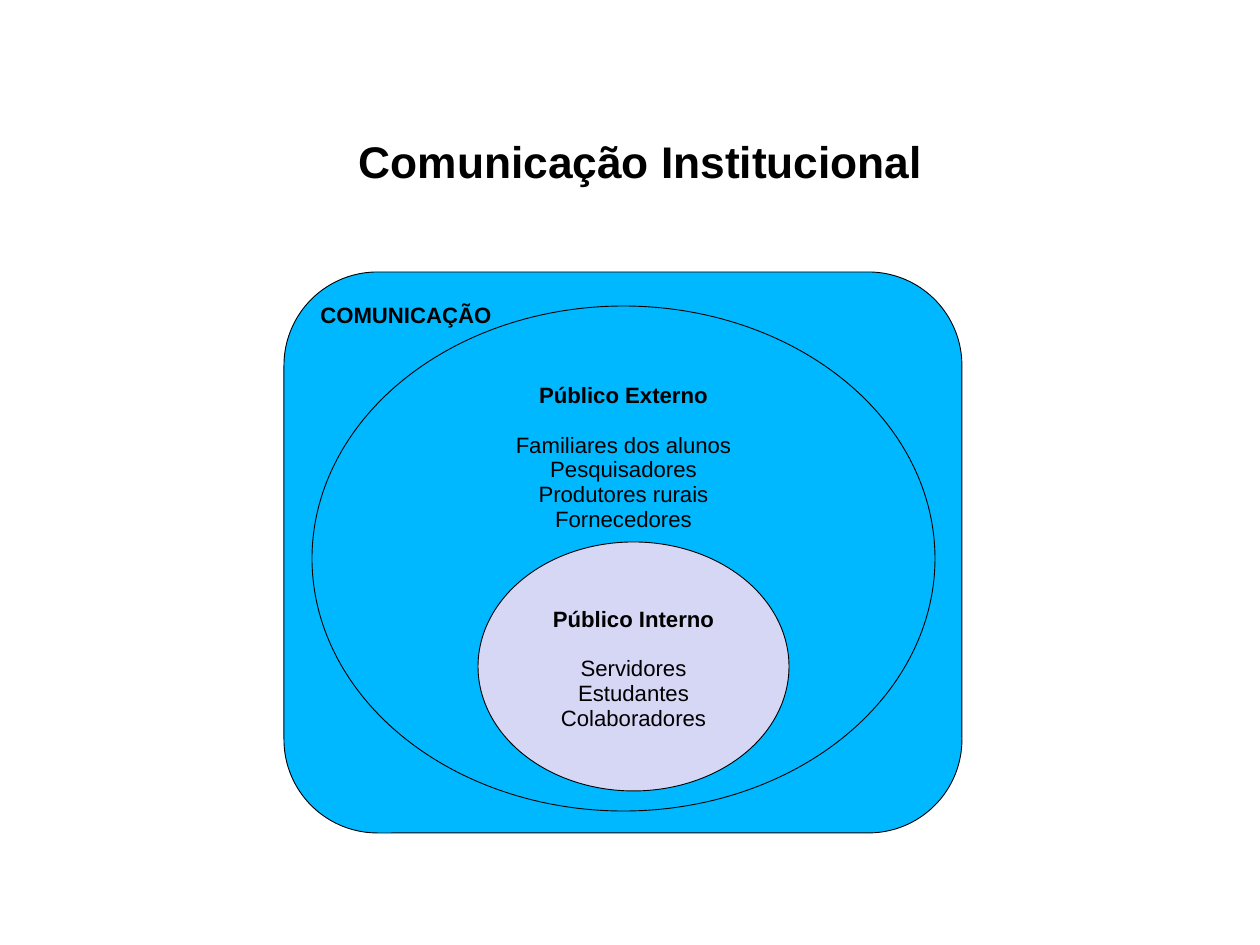
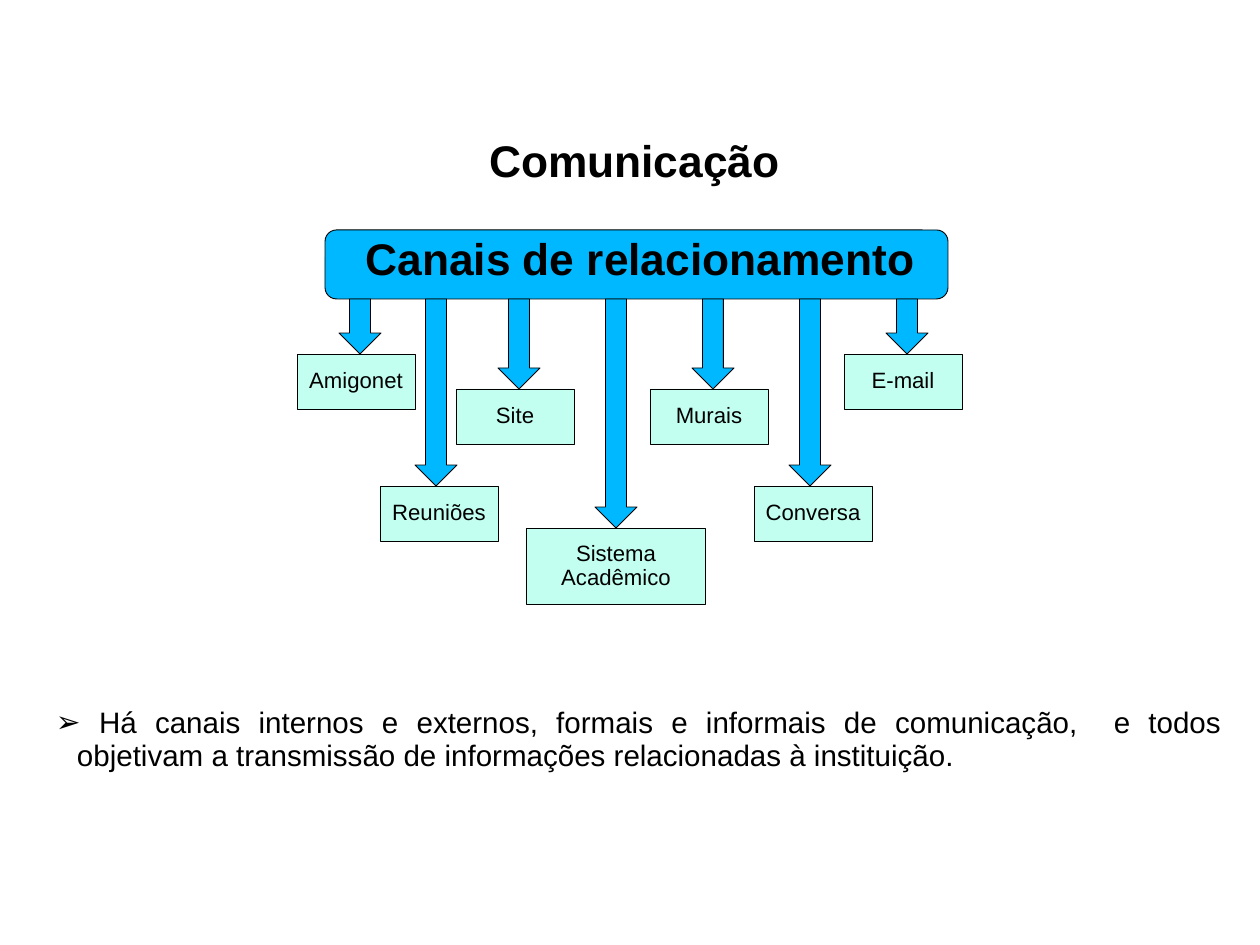
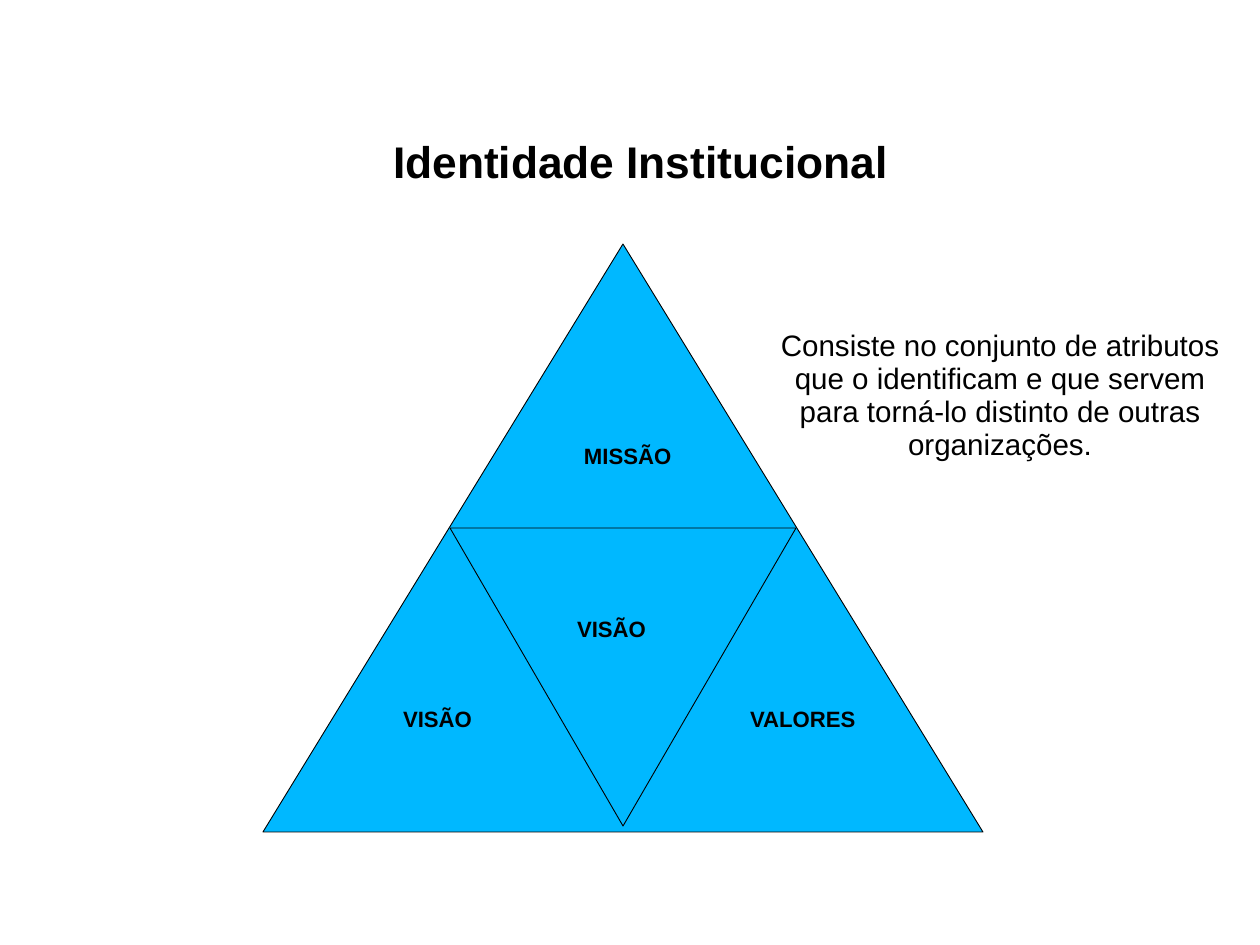
from lxml import etree
from pptx import Presentation
from pptx.dml.color import RGBColor
from pptx.enum.shapes import MSO_SHAPE
from pptx.enum.text import MSO_ANCHOR, PP_ALIGN
from pptx.oxml.ns import qn
from pptx.util import Pt

EMU_PER_PX = 10320
SLIDE_WIDTH, SLIDE_HEIGHT = 1260, 945
FONT = "Arial"
LINE_SPACING = 0.93
BLANK_LAYOUT = 6

BLACK = RGBColor(0x00, 0x00, 0x00)
BLUE = RGBColor(0x00, 0xB8, 0xFF)
LILAC = RGBColor(0xD6, 0xD6, 0xF5)
MINT = RGBColor(0xC2, 0xFF, 0xF0)

LEFT, CENTER, JUSTIFY = PP_ALIGN.LEFT, PP_ALIGN.CENTER, PP_ALIGN.JUSTIFY
TOP, MIDDLE = MSO_ANCHOR.TOP, MSO_ANCHOR.MIDDLE
RECTANGLE, ROUNDED = MSO_SHAPE.RECTANGLE, MSO_SHAPE.ROUNDED_RECTANGLE
OVAL, TRIANGLE = MSO_SHAPE.OVAL, MSO_SHAPE.ISOSCELES_TRIANGLE
DOWN_ARROW = MSO_SHAPE.DOWN_ARROW

TITLE_FORMAT = {"size": Pt(36), "bold": True}
HEADING_FORMAT = {"size": Pt(18), "bold": True}
ITEM_FORMAT = {"size": Pt(18), "bold": False}
BODY_FORMAT = {"size": Pt(24), "bold": False}

NO_INSETS = (0, 0, 0, 0)
SHAPE_INSETS = (9, 4, 9, 4)


def px(length):
    return length * EMU_PER_PX


def set_attributes(target, values):
    for name, value in values.items():
        setattr(target, name, value)


def set_frame(frame, anchor, insets):
    left, top, right, bottom = insets
    set_attributes(frame, {
        "word_wrap": True,
        "vertical_anchor": anchor,
        "margin_left": px(left),
        "margin_top": px(top),
        "margin_right": px(right),
        "margin_bottom": px(bottom),
    })


def write_paragraph(paragraph, text, text_format, align=CENTER, spacing=LINE_SPACING):
    set_attributes(paragraph, {"alignment": align, "line_spacing": spacing})
    run = paragraph.add_run()
    run.text = text
    set_attributes(run.font, {"name": FONT, **text_format})
    run.font.color.rgb = BLACK


def add_bullet(paragraph, character, indent):
    properties = paragraph._p.get_or_add_pPr()
    properties.set("marL", str(px(indent)))
    properties.set("indent", str(-px(indent)))
    color = etree.SubElement(properties, qn("a:buClr"))
    etree.SubElement(color, qn("a:srgbClr")).set("val", str(BLACK))
    etree.SubElement(properties, qn("a:buFont")).set("typeface", FONT)
    etree.SubElement(properties, qn("a:buChar")).set("char", character)


def add_figure(slide, kind, box, fill):
    shape = slide.shapes.add_shape(kind, *map(px, box))
    shape.shadow.inherit = False
    shape.fill.solid()
    shape.fill.fore_color.rgb = fill
    shape.line.color.rgb = BLACK
    shape.line.width = Pt(0.75)
    return shape


def write_in_figure(shape, text, text_format, align=CENTER, anchor=MIDDLE, insets=SHAPE_INSETS):
    set_frame(shape.text_frame, anchor, insets)
    write_paragraph(shape.text_frame.paragraphs[0], text, text_format, align)


def add_text(slide, box, text, text_format, align=CENTER, insets=NO_INSETS,
             spacing=LINE_SPACING, bullet=None):
    frame = slide.shapes.add_textbox(*map(px, box)).text_frame
    set_frame(frame, MIDDLE, insets)
    paragraph = frame.paragraphs[0]
    if bullet:
        add_bullet(paragraph, bullet, 21)
    write_paragraph(paragraph, text, text_format, align, spacing)


def add_titled_slide(presentation, title, left=58, top=138):
    slide = presentation.slides.add_slide(presentation.slide_layouts[BLANK_LAYOUT])
    add_text(slide, (left, top, 1165, 52), title, TITLE_FORMAT)
    return slide


def add_audience(slide, box, fill, heading, members, top_inset):
    shape = add_figure(slide, OVAL, box, fill)
    write_in_figure(shape, heading, HEADING_FORMAT, anchor=TOP, insets=(9, top_inset, 9, 4))
    for index, member in enumerate(members):
        paragraph = shape.text_frame.add_paragraph()
        write_paragraph(paragraph, member, ITEM_FORMAT)
        if index == 0:
            paragraph.space_before = Pt(20)


def add_channel(slide, bar_bottom, name, arrow_center, box_center, drop, size=(118, 55)):
    arrow_width = 42
    width, height = size
    add_figure(slide, DOWN_ARROW,
               (arrow_center - arrow_width // 2, bar_bottom, arrow_width, drop), BLUE)
    box = add_figure(slide, RECTANGLE,
                     (box_center - width // 2, bar_bottom + drop, width, height), MINT)
    write_in_figure(box, name, ITEM_FORMAT)


def build_audiences(presentation):
    slide = add_titled_slide(presentation, "Comunicação Institucional")
    field = add_figure(slide, ROUNDED, (284, 272, 678, 561), BLUE)
    write_in_figure(field, "COMUNICAÇÃO", HEADING_FORMAT, LEFT, TOP)
    add_audience(slide, (312, 306, 623, 505), BLUE, "Público Externo",
                 ("Familiares dos alunos", "Pesquisadores", "Produtores rurais", "Fornecedores"), 4)
    add_audience(slide, (478, 542, 311, 249), LILAC, "Público Interno",
                 ("Servidores", "Estudantes", "Colaboradores"), 29)


def build_channels(presentation):
    slide = add_titled_slide(presentation, "Comunicação", left=52, top=137)
    bar_top, bar_height = 230, 69
    bar = add_figure(slide, ROUNDED, (325, bar_top, 623, bar_height), BLUE)
    write_in_figure(bar, "Canais de relacionamento", TITLE_FORMAT, insets=(9, 0, 2, 8))
    channels = (
        ("Amigonet", 360, 356, 55),
        ("Site", 519, 515, 90),
        ("Murais", 713, 709, 90),
        ("E-mail", 907, 903, 55),
        ("Sistema Acadêmico", 616, 616, 229, (180, 76)),
        ("Reuniões", 436, 439, 187),
        ("Conversa", 810, 813, 187),
    )
    for channel in channels:
        add_channel(slide, bar_top + bar_height, *channel)
    add_text(slide, (56, 666, 1165, 148),
             " Há canais internos e externos, formais e informais de comunicação,  e todos "
             "objetivam a transmissão de informações relacionadas à instituição.",
             BODY_FORMAT, JUSTIFY, bullet="➢")


def build_identity(presentation):
    slide = add_titled_slide(presentation, "Identidade Institucional")
    add_figure(slide, TRIANGLE, (263, 244, 720, 588), BLUE)
    inner_triangle = add_figure(slide, TRIANGLE, (450, 528, 346, 298), BLUE)
    inner_triangle.rotation = 180
    labels = (
        ("MISSÃO", 575, 438),
        ("VISÃO", 394, 701),
        ("VALORES", 741, 701),
        ("VISÃO", 568, 611),
    )
    for text, left, top in labels:
        add_text(slide, (left, top, 125, 36), text, HEADING_FORMAT, LEFT, SHAPE_INSETS, 1.0)
    add_text(slide, (763, 272, 474, 249),
             "Consiste no conjunto de atributos que o identificam e que servem "
             "para torná-lo distinto de outras organizações.", BODY_FORMAT)


def main():
    presentation = Presentation()
    presentation.slide_width = px(SLIDE_WIDTH)
    presentation.slide_height = px(SLIDE_HEIGHT)
    build_audiences(presentation)
    build_channels(presentation)
    build_identity(presentation)
    presentation.save("out.pptx")


if __name__ == "__main__":
    main()
